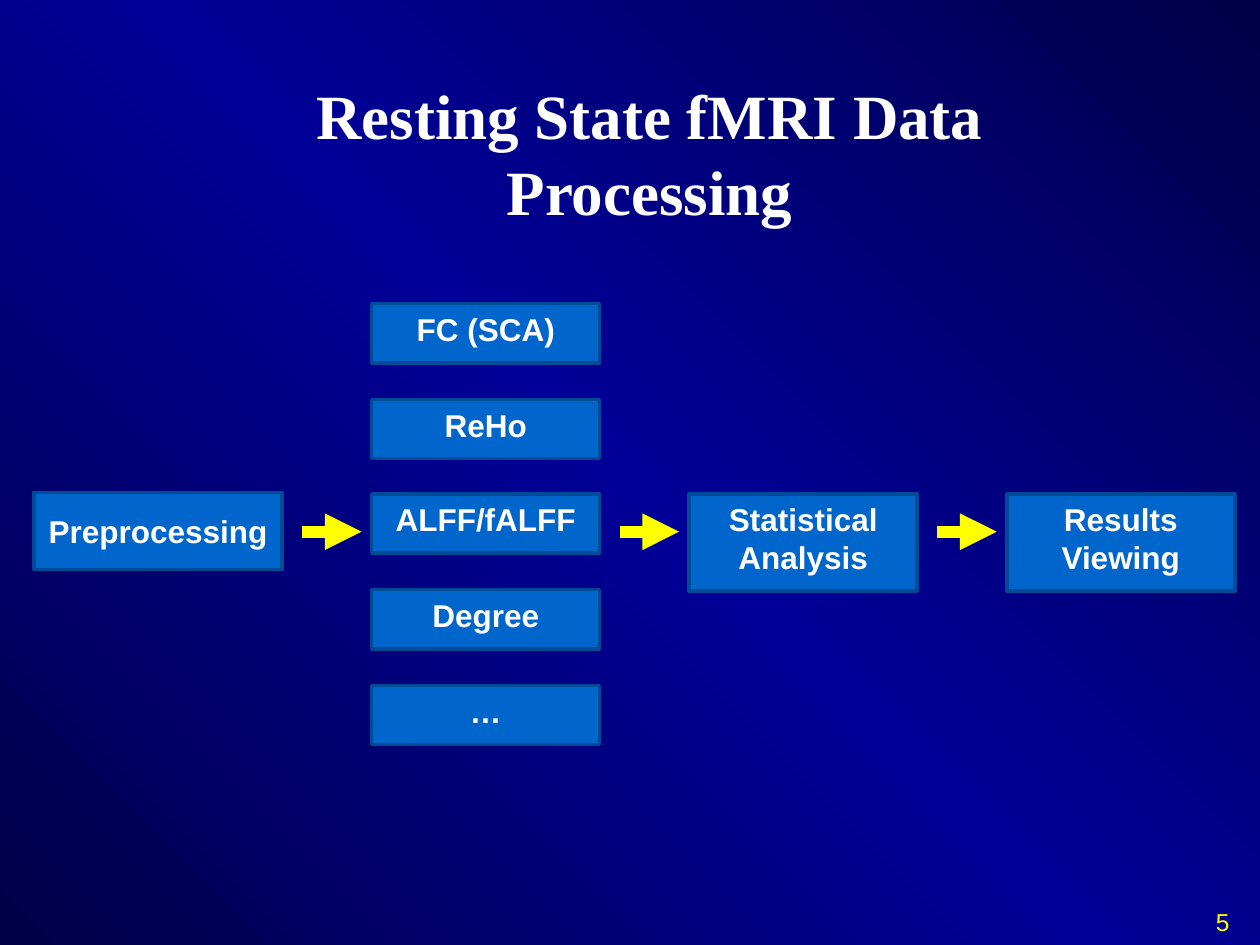
from copy import deepcopy
from dataclasses import dataclass

from lxml import etree
from pptx import Presentation
from pptx.dml.color import RGBColor
from pptx.enum.shapes import MSO_CONNECTOR, MSO_SHAPE
from pptx.enum.text import MSO_ANCHOR, PP_ALIGN
from pptx.oxml.ns import qn
from pptx.util import Pt

PX = 9144
RECT = MSO_SHAPE.RECTANGLE
STRAIGHT = MSO_CONNECTOR.STRAIGHT
TOP, MIDDLE = MSO_ANCHOR.TOP, MSO_ANCHOR.MIDDLE
CENTER = PP_ALIGN.CENTER


@dataclass(frozen=True)
class Theme:
    """Colours, fonts and type sizes of the slide."""
    dark: str = "000047"
    light: str = "000099"
    box: str = "0066CC"
    border: str = "004B97"
    accent: str = "FFFF00"
    text: str = "FFFFFF"
    serif: str = "Times New Roman"
    sans: str = "Arial"
    title_size: int = 36
    label_size: int = 18
    number_size: int = 14
    border_width: int = 2
    arrow_width: int = 7


THEME = Theme()


def rgb(code):
    """Turn a hex code into a colour."""
    return RGBColor.from_string(code)


def px(*lengths):
    """Turn pixel lengths into EMU."""
    return [n * PX for n in lengths]


def write(s, text, font, size, color, bold=True, anchor=TOP):
    """Put one centred paragraph into a shape."""
    tf = s.text_frame
    tf.word_wrap = True
    tf.vertical_anchor = anchor
    p = tf.paragraphs[0]
    p.text = text
    p.alignment = CENTER
    p.font.name = font
    p.font.size = Pt(size)
    p.font.bold = bold
    p.font.color.rgb = rgb(color)


def paint_background(slide):
    """Fill the slide with a diagonal dark-light-dark gradient."""
    fill = slide.background.fill
    fill.gradient()
    fill.gradient_angle = 45
    stops = slide.element.find(".//" + qn("a:gsLst"))
    stops.insert(1, deepcopy(stops[0]))
    colors = (THEME.dark, THEME.light, THEME.dark)
    for stop, color, position in zip(fill.gradient_stops, colors, (0, 0.5, 1)):
        stop.color.rgb = rgb(color)
        stop.position = position


def add_title(slide, box, text):
    """Place the slide title in the given box."""
    s = slide.shapes.add_textbox(*px(*box))
    write(s, text, THEME.serif, THEME.title_size, THEME.text, anchor=MIDDLE)


def add_page_number(slide, box, number):
    """Place the page number in the given box."""
    s = slide.shapes.add_textbox(*px(*box))
    write(s, str(number), THEME.sans, THEME.number_size, THEME.accent, bold=False)


def add_step(slide, box, text, anchor=TOP):
    """Draw one labelled step of the flow."""
    s = slide.shapes.add_shape(RECT, *px(*box))
    s.shadow.inherit = False
    s.fill.solid()
    s.fill.fore_color.rgb = rgb(THEME.box)
    s.line.color.rgb = rgb(THEME.border)
    s.line.width = Pt(THEME.border_width)
    write(s, text, THEME.sans, THEME.label_size, THEME.text, anchor=anchor)


def add_arrow(slide, x, y, length):
    """Draw a thick arrow pointing right from (x, y)."""
    s = slide.shapes.add_connector(STRAIGHT, *px(x, y, x + length, y))
    s.line.color.rgb = rgb(THEME.accent)
    s.line.width = Pt(THEME.arrow_width)
    etree.SubElement(s.line._get_or_add_ln(), qn("a:tailEnd"), type="triangle")
    etree.SubElement(s.element.spPr, qn("a:effectLst"))


def add_flow(slide, box, measures):
    """Draw the pipeline: first step, stack of measures, later steps and arrows."""
    left, top, width, height = box
    step_w, measure_h, result_h, pitch = 181, 47, 77, 252
    row_gap = (height - measure_h) / (len(measures) - 1)
    stack_x = left + width - step_w - 2 * pitch
    middle = top + (height - measure_h) // 2

    add_step(slide, (left, middle - 1, 197, 61), "Preprocessing", MIDDLE)
    for i, measure in enumerate(measures):
        add_step(slide, (stack_x, round(top + i * row_gap), step_w, measure_h), measure)
    for i, label in enumerate(("Statistical Analysis", "Results Viewing"), 1):
        add_step(slide, (stack_x + i * pitch, middle, step_w, result_h), label)
    for i in range(3):
        add_arrow(slide, stack_x - 55 + i * pitch, middle + 30, 47)


def main():
    """Build and save the slide."""
    prs = Presentation()
    prs.slide_width, prs.slide_height = px(1000, 750)
    slide = prs.slides.add_slide(prs.slide_layouts[6])
    paint_background(slide)
    add_page_number(slide, (941, 715, 59, 35), 5)
    add_title(slide, (169, 52, 693, 138), "Resting State fMRI Data Processing")
    add_flow(slide, (27, 241, 953, 350),
             ("FC (SCA)", "ReHo", "ALFF/fALFF", "Degree", "…"))
    prs.save("out.pptx")


if __name__ == "__main__":
    main()
